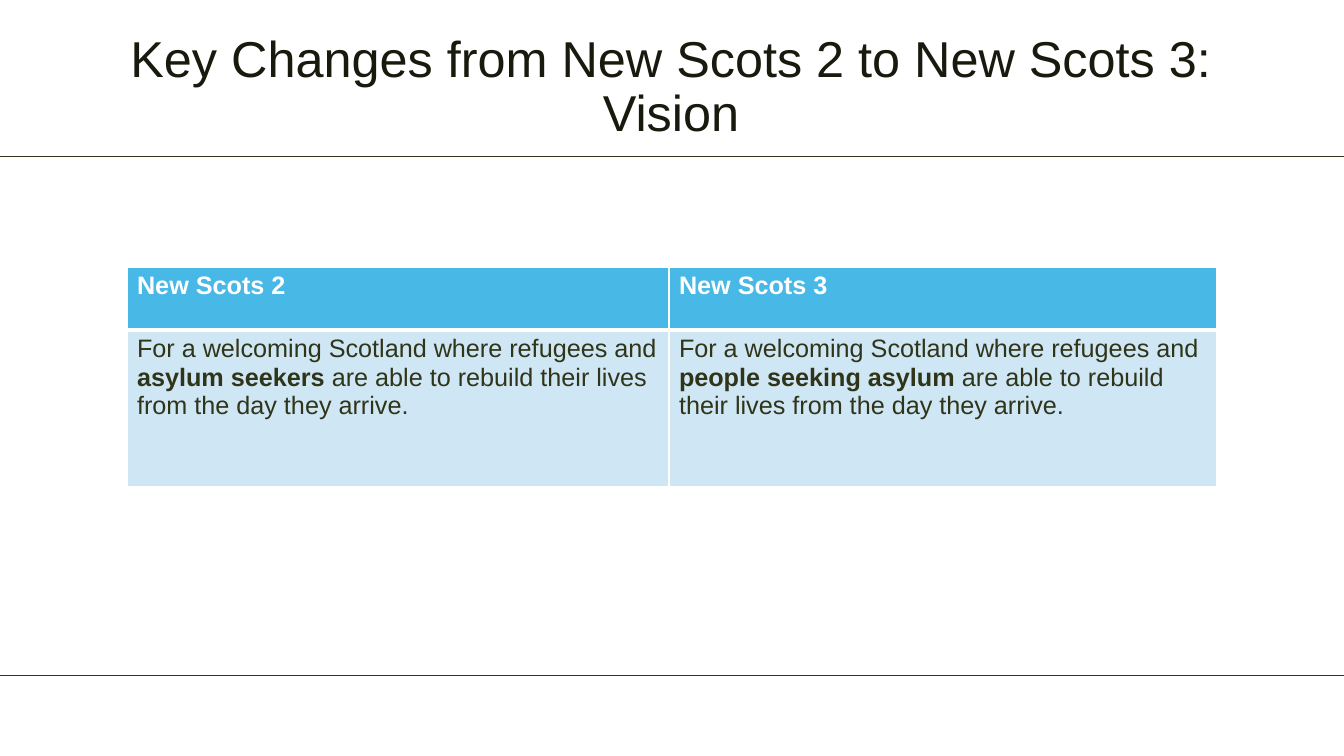
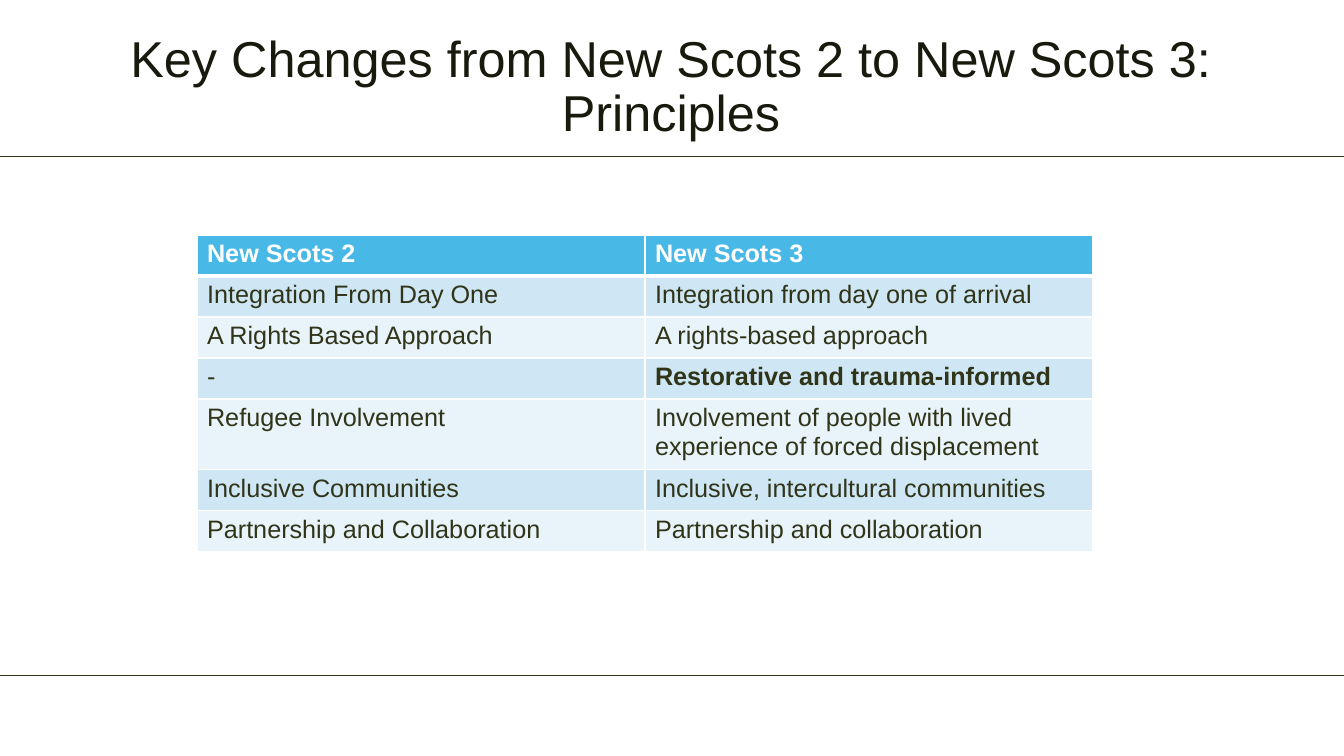
import lxml.etree
import pptx
import pptx.dml.color
import pptx.enum.shapes
import pptx.enum.text
import pptx.oxml.ns
import pptx.util

HEADER = ["New Scots 2", "New Scots 3"]
TITLE = "Key Changes from New Scots 2 to New Scots 3:"

# A cell is a list of (text, bold) spans, or a plain string.
SLIDES = [
    {
        "topic": "Vision",
        "origin": (127, 267),
        "columns": [542, 548],
        "heights": [63, 157],
        "rows": [
            [
                [("For a welcoming Scotland where refugees and ", False),
                 ("asylum seekers ", True),
                 ("are able to rebuild their lives from the day they arrive.", False)],
                [("For a welcoming Scotland where refugees and ", False),
                 ("people seeking asylum ", True),
                 ("are able to rebuild their lives from the day they arrive.", False)],
            ],
        ],
    },
    {
        "topic": "Principles",
        "origin": (197, 235),
        "columns": [448, 448],
        "heights": [41, 41, 41, 41, 67, 41, 41],
        "rows": [
            ["Integration From Day One", "Integration from day one of arrival"],
            ["A Rights Based Approach", "A rights-based approach"],
            ["-", [("Restorative and trauma-informed", True)]],
            ["Refugee Involvement",
             "Involvement of people with lived experience of forced displacement"],
            ["Inclusive Communities", "Inclusive, intercultural communities"],
            ["Partnership and Collaboration", "Partnership and collaboration"],
        ],
    },
]

THEME = {
    "font": "Arial",
    "title_size": 36,
    "table_size": 18,
    "title": "181A0D",
    "text": "303519",
    "white": "FFFFFF",
    "header": "48B8E6",
    "bands": ["CFE6F5", "E9F3FA"],
    "rule_width": 0.5,
    "border_width": 1,
    "header_border_width": 3,
}
PAGE_SIZE = (1344, 756)
TITLE_BOX = (48, 29, 1246, 106)
RULE_TOPS = [156, 675]
EMU_PER_PX = 914400 / 100.8


def px(length):
    return pptx.util.Emu(round(length * EMU_PER_PX))


def color(code):
    return pptx.dml.color.RGBColor.from_string(code)


def add_span(para, text, size, code, bold=False):
    span = para.add_run()
    span.text = text
    formats = {"name": THEME["font"], "size": pptx.util.Pt(size), "bold": bold}
    for name, value in formats.items():
        setattr(span.font, name, value)
    span.font.color.rgb = color(code)


def add_rules(page):
    for top in RULE_TOPS:
        rule = page.shapes.add_connector(
            pptx.enum.shapes.MSO_CONNECTOR.STRAIGHT,
            px(0), px(top), px(PAGE_SIZE[0]), px(top))
        rule.line.color.rgb = color(THEME["text"])
        rule.line.width = pptx.util.Pt(THEME["rule_width"])
        lxml.etree.SubElement(rule._element.spPr, pptx.oxml.ns.qn("a:effectLst"))


def add_title(page, topic):
    box = page.shapes.add_textbox(*map(px, TITLE_BOX))
    box.text_frame.word_wrap = True
    box.text_frame.vertical_anchor = pptx.enum.text.MSO_ANCHOR.TOP
    para = box.text_frame.paragraphs[0]
    para.alignment = pptx.enum.text.PP_ALIGN.CENTER
    para.line_spacing = 0.9
    add_span(para, TITLE, THEME["title_size"], THEME["title"])
    para.add_line_break()
    add_span(para, topic, THEME["title_size"], THEME["title"])


def set_borders(cell, top, bottom):
    """Draw white cell borders; top and bottom are widths in points."""
    side = THEME["border_width"]
    widths = {"lnL": side, "lnR": side, "lnT": top, "lnB": bottom}
    properties = cell._tc.get_or_add_tcPr()
    for index, (tag, width) in enumerate(widths.items()):
        border = lxml.etree.Element(
            pptx.oxml.ns.qn(f"a:{tag}"), w=str(pptx.util.Pt(width)))
        fill = lxml.etree.SubElement(border, pptx.oxml.ns.qn("a:solidFill"))
        lxml.etree.SubElement(fill, pptx.oxml.ns.qn("a:srgbClr"), val=THEME["white"])
        properties.insert(index, border)


def fill_cell(cell, content, row):
    is_header = row == 0
    bands = THEME["bands"]
    cell.fill.solid()
    cell.fill.fore_color.rgb = color(
        THEME["header"] if is_header else bands[(row - 1) % len(bands)])
    thin, thick = THEME["border_width"], THEME["header_border_width"]
    set_borders(cell, thick if row == 1 else thin, thick if is_header else thin)
    spans = [(content, is_header)] if isinstance(content, str) else content
    for text, bold in spans:
        add_span(cell.text_frame.paragraphs[0], text, THEME["table_size"],
                 THEME["white"] if is_header else THEME["text"], bold)


def add_comparison(page, content):
    rows = [HEADER] + content["rows"]
    columns, heights = content["columns"], content["heights"]
    left, top = content["origin"]
    table = page.shapes.add_table(
        len(rows), len(columns), px(left), px(top),
        px(sum(columns)), px(sum(heights))).table
    table.horz_banding = False
    for column, width in zip(table.columns, columns):
        column.width = px(width)
    for row, (cells, height) in enumerate(zip(rows, heights)):
        table.rows[row].height = px(height)
        for column, cell_content in enumerate(cells):
            fill_cell(table.cell(row, column), cell_content, row)


def main():
    deck = pptx.Presentation()
    deck.slide_width, deck.slide_height = map(px, PAGE_SIZE)
    for content in SLIDES:
        page = deck.slides.add_slide(deck.slide_layouts[6])
        add_rules(page)
        add_title(page, content["topic"])
        add_comparison(page, content)
    deck.save("out.pptx")


if __name__ == "__main__":
    main()
